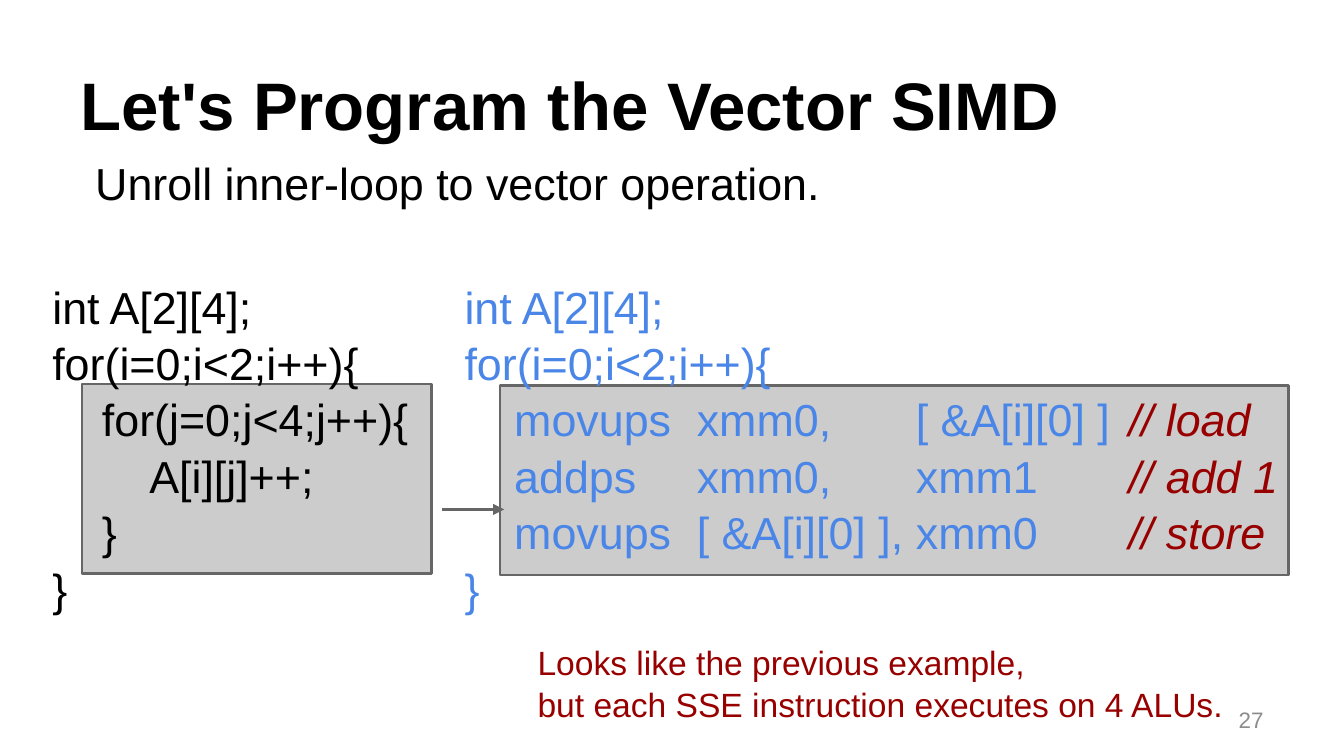
from lxml import etree
from pptx import Presentation
from pptx.dml.color import RGBColor
from pptx.enum.shapes import MSO_CONNECTOR, MSO_SHAPE
from pptx.enum.text import MSO_ANCHOR, PP_ALIGN
from pptx.oxml.ns import qn
from pptx.util import Cm, Pt

RECT = MSO_SHAPE.RECTANGLE
LINE = MSO_CONNECTOR.STRAIGHT
TOP, MID, LOW = MSO_ANCHOR.TOP, MSO_ANCHOR.MIDDLE, MSO_ANCHOR.BOTTOM
LEFT, RIGHT = PP_ALIGN.LEFT, PP_ALIGN.RIGHT
BLACK, BLUE, RED, GREY = "000000", "4A86E8", "980000", "666666"


def tint(code):
    return RGBColor.from_string(code)


def write(place, rows, size, bold=False, space=1.05, anchor=TOP, align=LEFT, stops=()):
    box = slide.shapes.add_textbox(*[Cm(n) for n in place])
    frame = box.text_frame
    frame.word_wrap = True
    frame.vertical_anchor = anchor
    frame.margin_left = frame.margin_right = Cm(0.25)
    frame.margin_top = frame.margin_bottom = Cm(0.25)
    for i, row in enumerate(rows):
        para = frame.paragraphs[0] if i == 0 else frame.add_paragraph()
        para.alignment = align
        para.line_spacing = space
        if stops:
            tabs = etree.SubElement(para._p.get_or_add_pPr(), qn("a:tabLst"))
            for stop in stops:
                etree.SubElement(tabs, qn("a:tab"), pos=str(Cm(stop)), algn="l")
        for text, color, slant in row:
            run = para.add_run()
            run.text = text
            font = run.font
            font.name = "Arial"
            font.size = Pt(size)
            font.bold = bold
            font.italic = slant
            font.color.rgb = tint(color)


deck = Presentation()
deck.slide_width = Cm(25.4)
deck.slide_height = Cm(14.29)
slide = deck.slides.add_slide(deck.slide_layouts[6])

for left, top, width in [(1.55, 7.26, 6.6), (9.45, 7.29, 14.91)]:
    panel = slide.shapes.add_shape(RECT, Cm(left), Cm(top), Cm(width), Cm(3.58))
    panel.shadow.inherit = False
    panel.fill.solid()
    panel.fill.fore_color.rgb = tint("CCCCCC")
    panel.line.color.rgb = tint(GREY)
    panel.line.width = Pt(1.5)

head = ["int A[2][4];", "for(i=0;i<2;i++){"]
loop = head + ["    for(j=0;j<4;j++){", "        A[i][j]++;", "    }", "}"]
steps = [
    ("    movups\txmm0,\t[ &A[i][0] ]\t", "// load"),
    ("    addps\txmm0,\txmm1\t", "// add 1"),
    ("    movups\t[ &A[i][0] ],\txmm0\t", "// store"),
]
vector = [[(text, BLUE, False)] for text in head]
vector += [[(code, BLUE, False), (note, RED, True)] for code, note in steps]
vector += [[("}", BLUE, False)]]
write((8.53, 4.98, 16.51, 8.1), vector, 24, stops=(4.39, 8.53, 12.55))
write((0.74, 4.98, 7.87, 8.43), [[(text, BLACK, False)] for text in loop], 24)

arrow = slide.shapes.add_connector(LINE, Cm(8.36), Cm(9.63), Cm(9.53), Cm(9.63))
arrow.line.color.rgb = tint(GREY)
arrow.line.width = Pt(1.5)
etree.SubElement(arrow.line._get_or_add_ln(), qn("a:tailEnd"), type="triangle")
etree.SubElement(arrow._element.spPr, qn("a:effectLst"))

notes = ["Looks like the previous example,", "but each SSE instruction executes on 4 ALUs."]
write((9.91, 11.84, 14.45, 1.98), [[(text, RED, False)] for text in notes], 18)
title = [[("Let's Program the Vector SIMD", BLACK, False)]]
write((1.27, 0.58, 22.86, 2.39), title, 36, bold=True, space=1.0, anchor=LOW)
lead = [[("Unroll inner-loop to vector operation.", BLACK, False)]]
write((1.55, 2.64, 21.84, 1.02), lead, 24)
page = [[("27", "8C8C8C", False)]]
write((18.21, 13.23, 5.92, 0.76), page, 12, space=1.0, anchor=MID, align=RIGHT)

deck.save("out.pptx")
